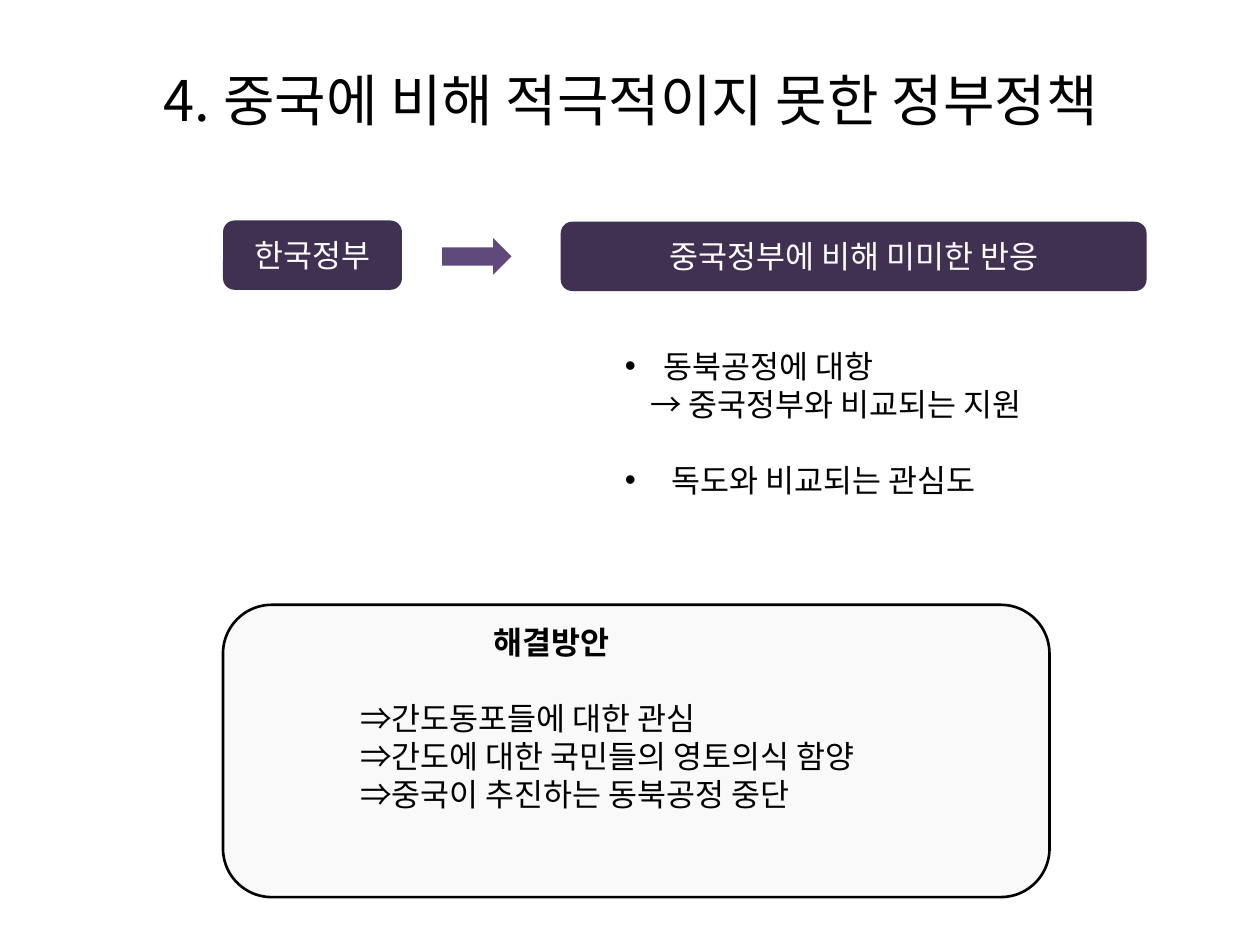
from lxml.etree import SubElement
from pptx import Presentation
from pptx.dml.color import RGBColor
from pptx.enum.shapes import MSO_SHAPE
from pptx.enum.text import MSO_ANCHOR, MSO_AUTO_SIZE, PP_ALIGN
from pptx.oxml.ns import qn
from pptx.util import Inches, Pt

FONT = "Noto Sans CJK KR"
SIZE, LINE = 18, 21.7  # text size and line pitch in points
COLORS = {"text": "000000", "label": "FFFFFF", "label_fill": "403152",
          "arrow": "604A7B", "panel": "F9F9F9"}

TITLE = "4. 중국에 비해 적극적이지 못한 정부정책"
LABELS = [("한국정부", (1.77, 1.75, 1.42, 0.55)),
          ("중국정부에 비해 미미한 반응", (4.45, 1.76, 4.65, 0.55))]
ARROW_BOX = (3.51, 1.89, 0.55, 0.29)
PANEL_BOX = (1.77, 4.8, 6.56, 2.32)

# text, left margin, first-line indent, lines of space before, bullet, bold
REACTIONS_BOX = (4.86, 2.7, 4.06, 1.92)
REACTIONS = [("동북공정에 대항", 0.31, -0.31, 0, True, False),
             ("→ 중국정부와 비교되는 지원", 0.2, 0, 0, False, False),
             ("독도와 비교되는 관심도", 0.37, -0.37, 1, True, False)]
SOLUTIONS_BOX = (2.64, 4.89, 4.78, 1.62)
SOLUTIONS = [("해결방안", 1.18, 0, 0, False, True),
             ("⇒간도동포들에 대한 관심", 0.12, 0, 1, False, False),
             ("⇒간도에 대한 국민들의 영토의식 함양", 0.12, 0, 0, False, False),
             ("⇒중국이 추진하는 동북공정 중단", 0.12, 0, 0, False, False)]


def rgb(name):
    return RGBColor.from_string(COLORS[name])


def place(shape, box):
    shape.left, shape.top, shape.width, shape.height = map(Inches, box)


def style_run(p, size, color, bold=False):
    r = p.runs[0]
    r.font.size, r.font.bold, r.font.name = Pt(size), bold, FONT
    r.font.color.rgb = rgb(color)
    SubElement(r.font._element, qn("a:ea"), typeface=FONT)


def add_shape(slide, kind, box, fill):
    s = slide.shapes.add_shape(kind, *map(Inches, box))
    s.shadow.inherit = False
    s.fill.solid()
    s.fill.fore_color.rgb = rgb(fill)
    s.line.fill.background()
    return s


def set_centered(shape, text, size, color):
    tf = shape.text_frame
    tf.text = text
    tf.vertical_anchor = MSO_ANCHOR.MIDDLE
    p = tf.paragraphs[0]
    p.alignment = PP_ALIGN.CENTER
    style_run(p, size, color)


def set_lines(shape, lines):
    tf = shape.text_frame
    tf.word_wrap = True
    tf.auto_size = MSO_AUTO_SIZE.NONE
    tf.vertical_anchor = MSO_ANCHOR.TOP
    tf.text = "\n".join(line[0] for line in lines)
    for p, (_, margin, indent, gap, bullet, bold) in zip(tf.paragraphs, lines):
        p.alignment = PP_ALIGN.LEFT
        p.line_spacing = Pt(LINE)
        p.space_before, p.space_after = Pt(gap * LINE), Pt(0)
        pPr = p._p.get_or_add_pPr()
        pPr.set("marL", str(Inches(margin)))
        pPr.set("indent", str(Inches(indent)))
        if bullet:
            SubElement(pPr, qn("a:buFont"), typeface="Arial")
            SubElement(pPr, qn("a:buChar"), char="•")
        else:
            SubElement(pPr, qn("a:buNone"))
        style_run(p, SIZE, "text", bold)


def main():
    prs = Presentation()
    prs.slide_width, prs.slide_height = Inches(10), Inches(7.5)
    slide = prs.slides.add_slide(prs.slide_layouts[1])
    title, reactions = slide.placeholders

    place(title, (0.51, 0.44, 9, 0.69))
    set_centered(title, TITLE, 32, "text")
    place(reactions, REACTIONS_BOX)
    set_lines(reactions, REACTIONS)

    for text, box in LABELS:
        label = add_shape(slide, MSO_SHAPE.ROUNDED_RECTANGLE, box, "label_fill")
        set_centered(label, text, SIZE, "label")
    add_shape(slide, MSO_SHAPE.RIGHT_ARROW, ARROW_BOX, "arrow")

    panel = add_shape(slide, MSO_SHAPE.ROUNDED_RECTANGLE, PANEL_BOX, "panel")
    panel.line.color.rgb = rgb("text")
    panel.line.width = Pt(1.5)
    solutions = add_shape(slide, MSO_SHAPE.RECTANGLE, SOLUTIONS_BOX, "panel")
    set_lines(solutions, SOLUTIONS)

    prs.save("out.pptx")


if __name__ == "__main__":
    main()
